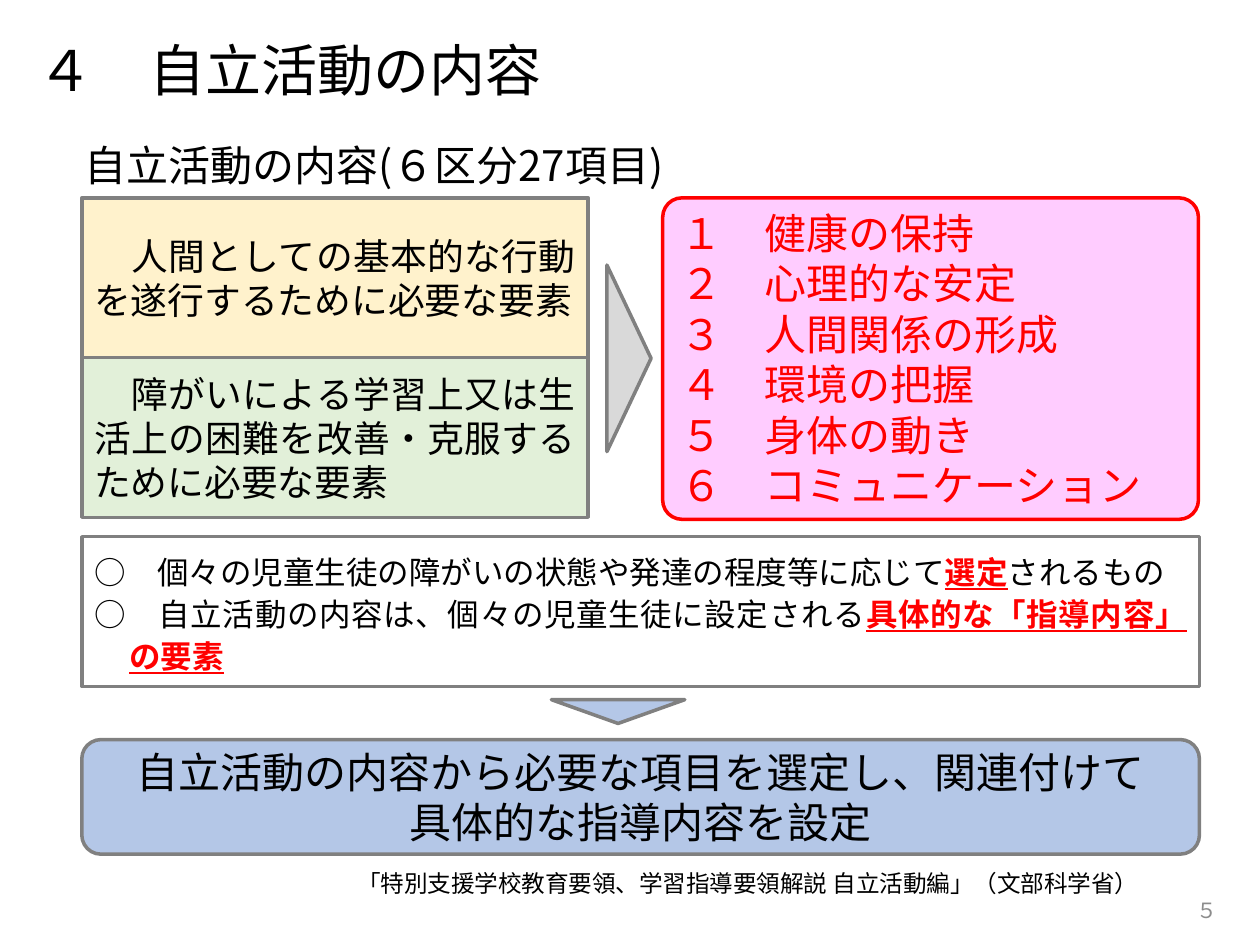
from pptx import Presentation
from pptx.dml.color import RGBColor
from pptx.enum import shapes, text
from pptx.oxml import ns
from pptx.util import Cm, Pt

FONT = "Noto Sans CJK JP"
BLACK = RGBColor(0x00, 0x00, 0x00)
WHITE = RGBColor(0xFF, 0xFF, 0xFF)
RED = RGBColor(0xFF, 0x00, 0x00)
GRAY = RGBColor(0x80, 0x80, 0x80)
NUMBER_GRAY = RGBColor(0x8C, 0x8C, 0x8C)
LIGHT_GRAY = RGBColor(0xD9, 0xD9, 0xD9)
PINK = RGBColor(0xFF, 0xCC, 0xFF)
CREAM = RGBColor(0xFF, 0xF2, 0xCC)
GREEN = RGBColor(0xE2, 0xF0, 0xD9)
BLUE = RGBColor(0xB4, 0xC7, 0xE7)

SHAPE = shapes.MSO_SHAPE
ALIGN = text.PP_ALIGN
ANCHOR = text.MSO_ANCHOR

LEFT, FULL_W = 1.65, 22.53
FACTOR_W, FACTOR_H, FACTOR_TOP = 10.21, 3.22, 3.99

AREAS = ["健康の保持", "心理的な安定", "人間関係の形成",
         "環境の把握", "身体の動き", "コミュニケーション"]
FACTORS = [("人間としての基本的な行動を遂行するために必要な要素", CREAM),
           ("障がいによる学習上又は生活上の困難を改善・克服するために必要な要素", GREEN)]
# Each note is a list of (words, emphasised) runs.
NOTES = [
    [("○　個々の児童生徒の障がいの状態や発達の程度等に応じて", False),
     ("選定", True), ("されるもの", False)],
    [("○　自立活動の内容は、個々の児童生徒に設定される", False),
     ("具体的な「指導内容」の要素", True)],
]


def add_run(p, words, size, color, strong=False):
    r = p.add_run()
    r.text = words
    f = r.font
    f.name, f.size, f.bold, f.underline = FONT, Pt(size), strong, strong
    f.color.rgb = color
    ea = r._r.get_or_add_rPr().makeelement(ns.qn("a:ea"), {"typeface": FONT})
    f._rPr.find(ns.qn("a:latin")).addnext(ea)


def write(sp, paragraphs, size, color=BLACK, align=ALIGN.JUSTIFY,
          anchor=ANCHOR.MIDDLE, spacing=1.2, hanging=0):
    """Fill a shape; a paragraph is a string or a list of (words, emphasised)."""
    tf = sp.text_frame
    tf.word_wrap = True
    tf.auto_size = text.MSO_AUTO_SIZE.NONE
    tf.vertical_anchor = anchor
    for i, runs in enumerate(paragraphs):
        p = tf.add_paragraph() if i else tf.paragraphs[0]
        p.alignment = align
        p.line_spacing = Pt(size * spacing)
        if hanging:
            pPr = p._p.get_or_add_pPr()
            pPr.set("marL", str(Cm(hanging)))
            pPr.set("indent", str(-Cm(hanging)))
        if isinstance(runs, str):
            runs = [(runs, False)]
        for words, strong in runs:
            add_run(p, words, size, RED if strong else color, strong)


def add_box(s, kind, x, y, w, h, fill, line=GRAY):
    sp = s.shapes.add_shape(kind, Cm(x), Cm(y), Cm(w), Cm(h))
    sp.shadow.inherit = False
    sp.fill.solid()
    sp.fill.fore_color.rgb = fill
    sp.line.color.rgb = line
    sp.line.width = Pt(2)
    return sp


def add_label(s, x, y, w, h):
    return s.shapes.add_textbox(Cm(x), Cm(y), Cm(w), Cm(h))


def add_title(s, words):
    sp = s.shapes.title
    sp.left, sp.top, sp.width, sp.height = Cm(0.5), Cm(0.5), Cm(24.4), Cm(1.8)
    write(sp, [words], 32, align=ALIGN.LEFT)


def add_factors(s):
    for i, (words, fill) in enumerate(FACTORS):
        sp = add_box(s, SHAPE.RECTANGLE, LEFT, FACTOR_TOP + i * FACTOR_H,
                     FACTOR_W, FACTOR_H, fill)
        write(sp, ["　" + words], 21)


def add_areas(s):
    sp = add_box(s, SHAPE.ROUNDED_RECTANGLE, 13.36, FACTOR_TOP, 10.8, 6.48,
                 PINK, RED)
    sp.adjustments[0] = 0.06
    numbered = [f"{n}　{area}" for n, area in zip("１２３４５６", AREAS)]
    write(sp, numbered, 24, RED)


def add_pointers(s):
    right = add_box(s, SHAPE.ISOSCELES_TRIANGLE, 10.8, 6.78, 3.76, 0.89,
                    LIGHT_GRAY)
    down = add_box(s, SHAPE.RIGHT_ARROW, 12.22, 13, 0.48, 2.69, BLUE)
    down.adjustments[1] = 1
    right.rotation = down.rotation = 90


def main():
    prs = Presentation()
    prs.slide_width, prs.slide_height = Cm(25.4), Cm(19.05)
    s = prs.slides.add_slide(prs.slide_layouts[5])

    add_title(s, "４　自立活動の内容")
    write(add_label(s, 1.45, 2.68, 14.68, 1.75),
          ["自立活動の内容(６区分27項目)"], 24, anchor=ANCHOR.TOP)
    add_factors(s)
    add_areas(s)
    add_pointers(s)

    notes = add_box(s, SHAPE.RECTANGLE, LEFT, 10.82, FULL_W, 3.02, WHITE)
    write(notes, NOTES, 18, spacing=1.33, hanging=0.71)

    conclusion = add_box(s, SHAPE.ROUNDED_RECTANGLE, LEFT, 14.91, FULL_W, 2.31,
                         BLUE)
    write(conclusion, ["自立活動の内容から必要な項目を選定し、関連付けて",
                       "具体的な指導内容を設定"], 24, align=ALIGN.CENTER)

    citation = add_label(s, 0, 17.42, 24.16, 0.76)
    citation.text_frame.margin_right = Cm(1.2)
    write(citation, ["「特別支援学校教育要領、学習指導要領解説 自立活動編」（文部科学省）"],
          13.5, align=ALIGN.RIGHT)
    write(add_label(s, 19.08, 17.83, 5.71, 1.02), ["５"], 12, NUMBER_GRAY,
          ALIGN.RIGHT)

    prs.save("out.pptx")


if __name__ == "__main__":
    main()
